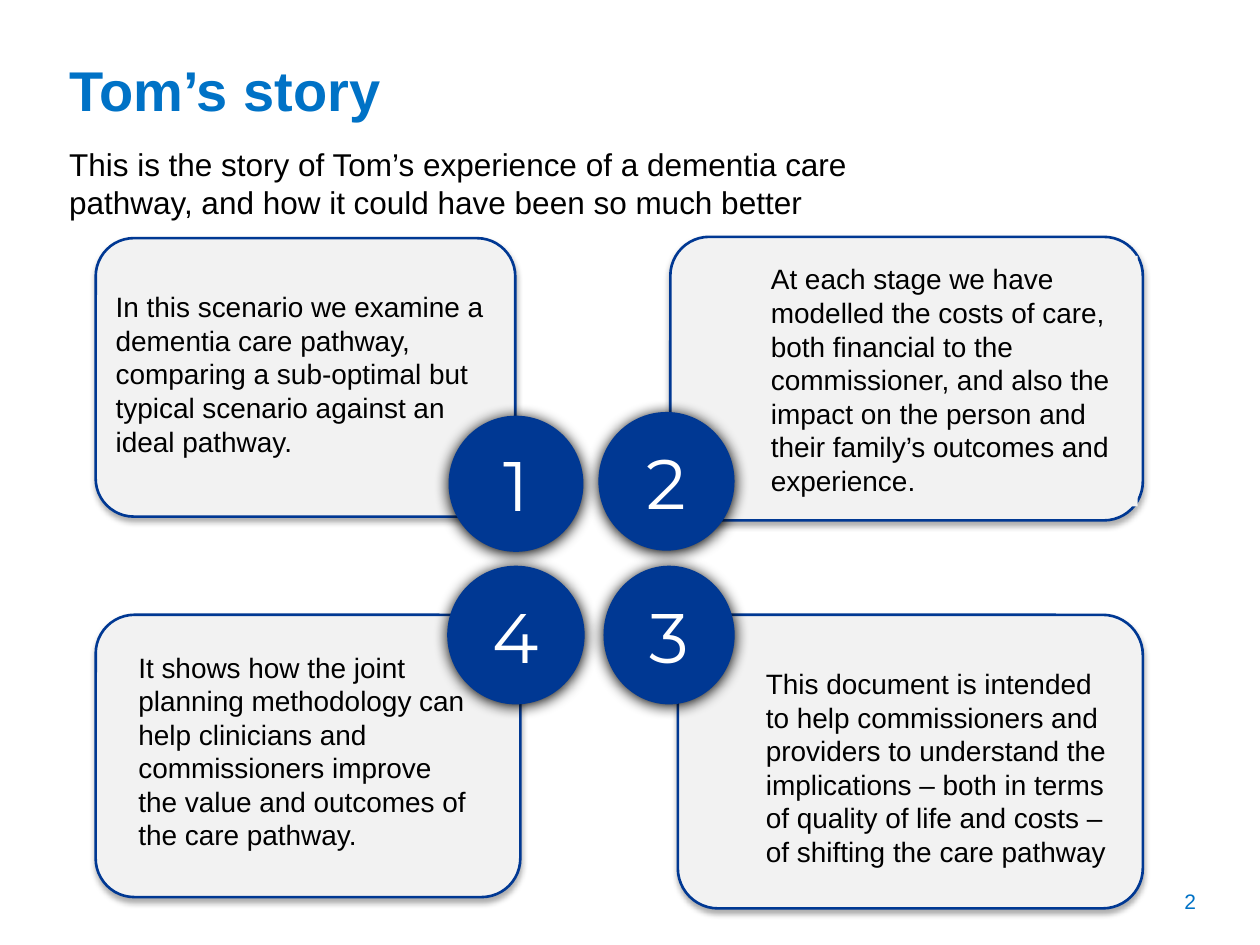
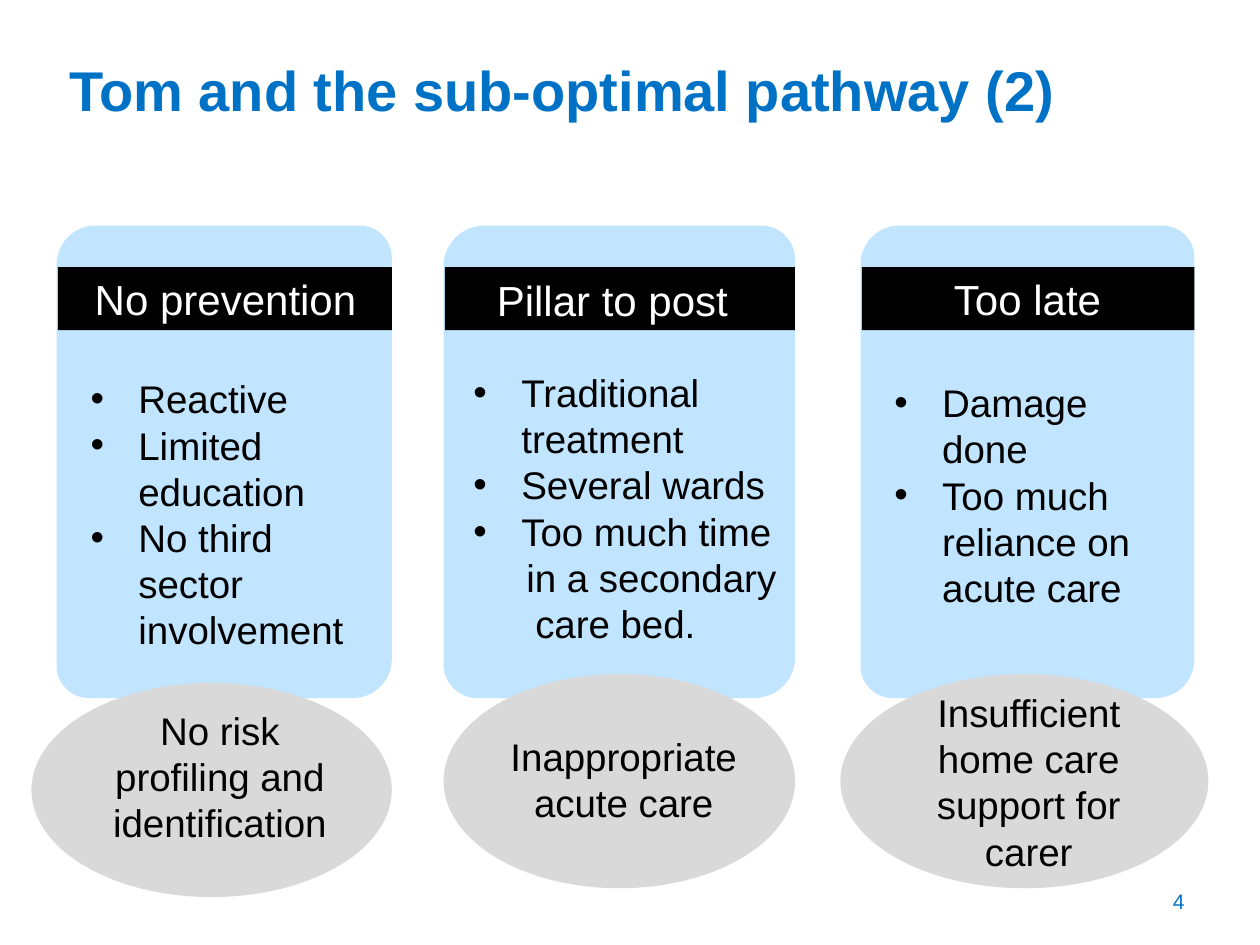
from lxml.etree import SubElement
from pptx import Presentation
from pptx.dml.color import RGBColor
from pptx.enum.shapes import MSO_SHAPE
from pptx.enum.text import MSO_ANCHOR, PP_ALIGN
from pptx.oxml.ns import qn
from pptx.util import Inches, Pt

TITLE_BLUE = RGBColor(0x00, 0x72, 0xC6)
NAVY = RGBColor(0x00, 0x38, 0x93)
PALE_BLUE = RGBColor(0xC1, 0xE5, 0xFF)
CARD_GREY = RGBColor(0xF2, 0xF2, 0xF2)
OVAL_GREY = RGBColor(0xD9, 0xD9, 0xD9)
BLACK = RGBColor(0x00, 0x00, 0x00)
WHITE = RGBColor(0xFF, 0xFF, 0xFF)

BODY_FONT = "Arial"
NUMBER_FONT = "Montserrat"
BULLET_INDENT = 0.38

# Card area, text area, text, circle area
STORY_CARDS = [
    ((0.76, 1.89, 3.33, 2.21), (0.82, 2.25, 3.16, 1.45),
     "In this scenario we examine a dementia care pathway, comparing a "
     "sub-optimal but typical scenario against an ideal pathway.",
     (3.57, 3.31, 1.05, 1.06)),
    ((5.32, 1.88, 3.75, 2.25), (6.02, 2.03, 3.01, 1.99),
     "At each stage we have modelled the costs of care, both financial to the "
     "commissioner, and also the impact on the person and their family’s "
     "outcomes and experience.",
     (4.76, 3.28, 1.06, 1.08)),
    ((5.38, 4.88, 3.69, 2.33), (5.98, 5.24, 3.01, 1.72),
     "This document is intended to help commissioners and providers to "
     "understand the implications – both in terms of quality of life and "
     "costs – of shifting the care pathway",
     (4.8, 4.5, 1.02, 1.08)),
    ((0.76, 4.88, 3.37, 2.24), (1, 5.11, 2.83, 1.72),
     "It shows how the joint planning methodology can help clinicians and "
     "commissioners improve the value and outcomes of the care pathway.",
     (3.56, 4.5, 1.07, 1.08)),
]

# Panel left and width, heading and its area, bullets and their area,
# oval area, outcome and its area
PATHWAY_COLUMNS = [
    (0.45, 2.66, "No prevention", (0.46, 2.12, 2.66, 0.5),
     ["Reactive", "Limited education", "No third sector involvement"],
     (0.62, 2.93, 2.25, 2.32), (0.25, 5.42, 2.86, 1.7),
     "No risk\vprofiling and identification", (0.55, 5.56, 2.39, 1.21)),
    (3.52, 2.79, "Pillar to post", (3.6, 2.13, 2.52, 0.5),
     ["Traditional treatment", "Several wards", "Too much time"],
     (3.66, 2.88, 2.64, 2.32), (3.52, 5.35, 2.79, 1.7),
     "Inappropriate acute care", (3.79, 5.77, 2.32, 0.84)),
    (6.83, 2.65, "Too late", (7.03, 2.12, 2.25, 0.5),
     ["Damage done", "Too much reliance on acute care"],
     (7, 2.96, 2.46, 1.95), (6.67, 5.35, 2.92, 1.7),
     "Insufficient home care support for carer", (6.95, 5.42, 2.43, 1.58)),
]


def inches(area):
    return [Inches(length) for length in area]


def format_paragraph(para, size, color, align=PP_ALIGN.LEFT, font=BODY_FONT, bold=False):
    para.alignment = align
    for span in para.runs:
        span.font.name = font
        span.font.size = Pt(size)
        span.font.bold = bold
        span.font.color.rgb = color


def add_text(page, area, text, size, color=BLACK, align=PP_ALIGN.LEFT,
             anchor=MSO_ANCHOR.TOP, bold=False):
    box = page.shapes.add_textbox(*inches(area))
    frame = box.text_frame
    frame.word_wrap = True
    frame.vertical_anchor = anchor
    frame.text = text
    for para in frame.paragraphs:
        format_paragraph(para, size, color, align, bold=bold)
    return box


def add_shape(page, kind, area, fill, line=None, adjustments=()):
    shape = page.shapes.add_shape(kind, *inches(area))
    shape.shadow.inherit = False
    shape.fill.solid()
    shape.fill.fore_color.rgb = fill
    if line is None:
        shape.line.fill.background()
    else:
        shape.line.color.rgb = line
        shape.line.width = Pt(1.5)
    for index, value in enumerate(adjustments):
        shape.adjustments[index] = value
    return shape


def add_drop_shadow(shape, opacity, blur, distance):
    """Cast a black shadow straight down; opacity in percent, lengths in points."""
    effects = shape._element.spPr.find(qn("a:effectLst"))
    shadow = SubElement(effects, qn("a:outerShdw"), blurRad=str(Pt(blur)),
                        dist=str(Pt(distance)), dir="5400000", rotWithShape="0")
    color = SubElement(shadow, qn("a:srgbClr"), val=str(BLACK))
    SubElement(color, qn("a:alpha"), val=str(opacity * 1000))


def set_indent(para, margin, first_line):
    properties = para._p.get_or_add_pPr()
    properties.set("marL", str(Inches(margin)))
    properties.set("indent", str(Inches(first_line)))
    return properties


def add_bullets(page, area, items):
    box = add_text(page, area, "\n".join(items), 22)
    for para in box.text_frame.paragraphs:
        properties = set_indent(para, BULLET_INDENT, -BULLET_INDENT)
        SubElement(properties, qn("a:buFont"), typeface=BODY_FONT)
        SubElement(properties, qn("a:buChar"), char="•")
    return box


def add_page(deck, title, number, number_left):
    page = deck.slides.add_slide(deck.slide_layouts[6])
    add_text(page, (0.45, 0.34, 8.05, 0.73), title, 32, TITLE_BLUE,
             anchor=MSO_ANCHOR.MIDDLE, bold=True)
    add_text(page, (number_left, 6.95, 2.33, 0.4), number, 12, TITLE_BLUE,
             PP_ALIGN.RIGHT, MSO_ANCHOR.MIDDLE)
    return page


def add_story_card(page, number, card_area, text_area, text, circle_area):
    card = add_shape(page, MSO_SHAPE.ROUNDED_RECTANGLE, card_area, CARD_GREY, NAVY, [0.137])
    add_drop_shadow(card, 32, 3.5, 2.2)
    box = add_text(page, text_area, text, 16)
    box.fill.solid()
    box.fill.fore_color.rgb = CARD_GREY

    circle = add_shape(page, MSO_SHAPE.OVAL, circle_area, NAVY, NAVY)
    add_drop_shadow(circle, 100, 8.5, 1)
    circle.text_frame.text = str(number)
    circle.text_frame.vertical_anchor = MSO_ANCHOR.MIDDLE
    format_paragraph(circle.text_frame.paragraphs[0], 40, WHITE, PP_ALIGN.CENTER, NUMBER_FONT)


def add_pathway_column(page, left, width, heading, heading_area, items, items_area,
                       oval_area, outcome, outcome_area):
    """Draw a panel with a heading band and bullets, and return the bullet box."""
    add_shape(page, MSO_SHAPE.ROUND_2_DIAG_RECTANGLE, (left, 1.79, width, 3.75),
              PALE_BLUE, adjustments=[0.116, 0.096])
    add_shape(page, MSO_SHAPE.RECTANGLE, (left + 0.01, 2.12, width - 0.01, 0.5), BLACK)
    add_text(page, heading_area, heading, 24, WHITE, PP_ALIGN.CENTER)
    add_shape(page, MSO_SHAPE.OVAL, oval_area, OVAL_GREY)
    add_text(page, outcome_area, outcome, 22, align=PP_ALIGN.CENTER)
    return add_bullets(page, items_area, items)


def build_story(deck):
    page = add_page(deck, "Tom’s story", "2", 7.26)
    add_text(page, (0.45, 1.1, 6.55, 1.11),
             "This is the story of Tom’s experience of a dementia care pathway, "
             "and how it could have been so much better", 18)
    for number, card in enumerate(STORY_CARDS, start=1):
        add_story_card(page, number, *card)


def build_pathway(deck):
    page = add_page(deck, "Tom and the sub-optimal pathway (2)", "4", 7.17)
    bullet_boxes = [add_pathway_column(page, *column) for column in PATHWAY_COLUMNS]
    continuation = bullet_boxes[1].text_frame.add_paragraph()
    continuation.text = "in a secondary care bed."
    set_indent(continuation, 0.49, -0.07)
    format_paragraph(continuation, 22, BLACK)


def main():
    deck = Presentation()
    deck.slide_width = Inches(10)
    deck.slide_height = Inches(7.5)
    build_story(deck)
    build_pathway(deck)
    deck.save("out.pptx")


if __name__ == "__main__":
    main()
